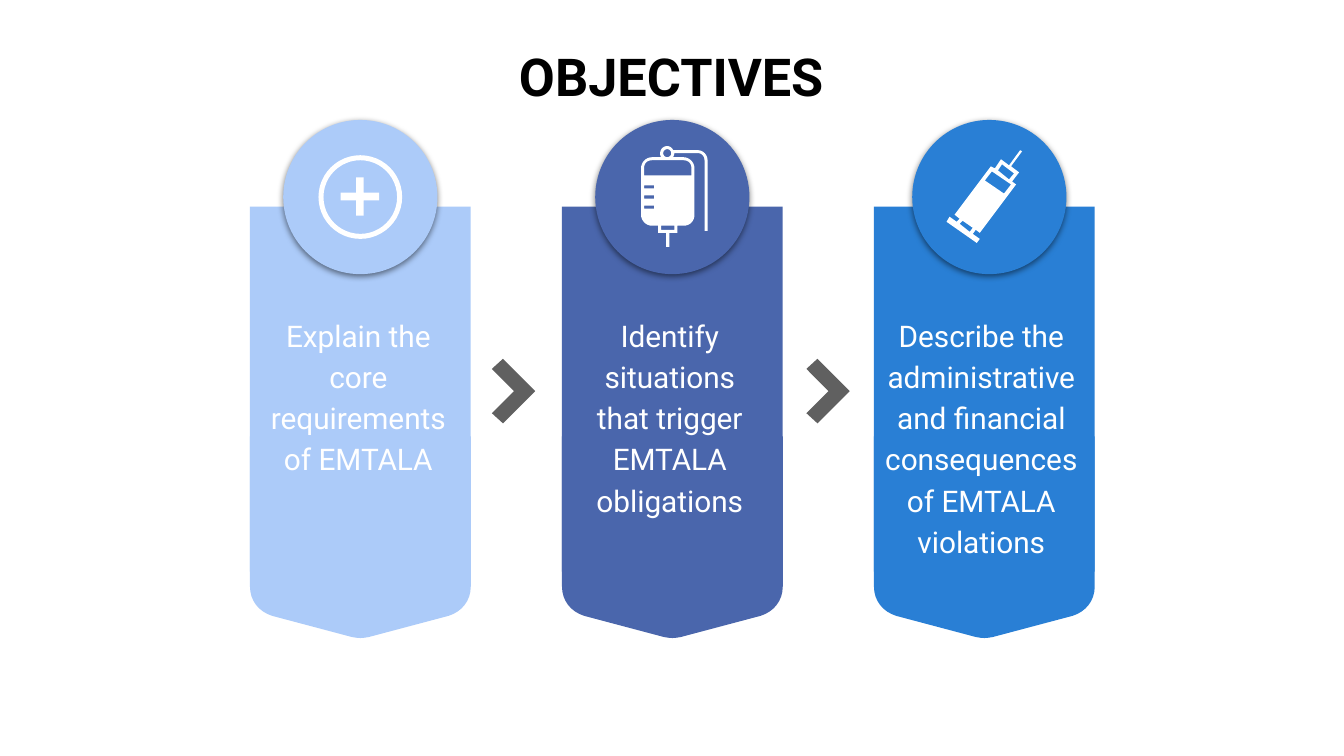
from collections import namedtuple
from dataclasses import dataclass

from lxml import etree
from pptx import Presentation
from pptx.dml.color import RGBColor
from pptx.enum.shapes import MSO_SHAPE
from pptx.enum.text import MSO_ANCHOR, MSO_AUTO_SIZE, PP_ALIGN
from pptx.oxml.ns import qn
from pptx.util import Inches, Pt

OVAL, RECT = MSO_SHAPE.OVAL, MSO_SHAPE.RECTANGLE
DONUT, CROSS = MSO_SHAPE.DONUT, MSO_SHAPE.CROSS
CENTER, TOP = PP_ALIGN.CENTER, MSO_ANCHOR.TOP
FIXED, GROW = MSO_AUTO_SIZE.NONE, MSO_AUTO_SIZE.SHAPE_TO_FIT_TEXT

# All positions are columns and rows of a square grid
CELL = Inches(0.1)
COLS, ROWS = 133.33, 75


@dataclass(frozen=True)
class Theme:
    font: str = "Roboto"
    title: float = 37.3
    body: float = 21.3
    ink: str = "000000"
    white: str = "FFFFFF"
    arrow: str = "606060"
    cards: tuple = ("ACCBF9", "4A66AC", "297FD5")


THEME = Theme()

# Card layout
LEFT, STEP, WIDE, TALL = 24.8, 30.95, 21.9, 36.2
CARD_TOP, TIP_TOP, TEXT_TOP = 20.5, 43.3, 29.7
DISC, DISC_TOP = 15.3, 11.9

Card = namedtuple("Card", "text nudge wide tall shift")
CARDS = (
    Card("Explain the core requirements of EMTALA", -0.2, 21.9, 22.1, 0),
    Card("Identify situations that trigger EMTALA obligations",
         0, 21.4, 33.4, 0),
    Card("Describe the administrative and financial consequences "
         "of EMTALA violations", -0.3, 21.9, 30.4, 0.5),
)


def box(left, top, right, base):
    return [(left, top), (right, top), (right, base), (left, base)]


# Outlines: a pair is a corner, six numbers are a Bezier curve
ARROW = [[(1.1, 0), (0, 1), (2.2, 3.2), (0, 5.4), (1.1, 6.4), (4.3, 3.2)]]
TIP = [[
    (0, 0), (0, 14.9), (0, 16.3, 0.9, 17.4, 2.2, 17.8), (10.1, 19.9),
    (10.4, 19.95, 10.65, 20, 10.95, 20),
    (11.25, 20, 11.5, 19.95, 11.8, 19.9),
    (19.7, 17.8), (21, 17.4, 21.9, 16.3, 21.9, 14.9), (21.9, 0),
]]
BAG = [
    # Bag, tube and hook
    [(2.6, 0), (2.2, 0, 1.9, 0.3, 1.9, 0.7), (1.9, 0.8, 1.9, 1, 2, 1.1),
     (1.1, 1.1), (0.5, 1.1, 0, 1.6, 0, 2.2), (0, 6.8),
     (0, 7.4, 0.5, 7.9, 1.1, 7.9), (1.7, 7.9), (1.7, 8.6), (2.5, 8.6),
     (2.5, 10), (2.8, 10), (2.8, 8.6), (3.6, 8.6), (3.6, 7.9), (4.2, 7.9),
     (4.9, 7.9, 5.3, 7.4, 5.3, 6.8), (5.3, 2.2),
     (5.3, 1.6, 4.8, 1.1, 4.2, 1.1), (3.2, 1.1),
     (3.2, 1, 3.3, 0.9, 3.3, 0.7), (5.7, 0.7),
     (6, 0.7, 6.3, 1, 6.3, 1.4), (6.3, 8.4), (6.6, 8.4), (6.6, 1.4),
     (6.6, 0.9, 6.2, 0.4, 5.6, 0.4), (3.2, 0.4),
     (3.1, 0.2, 2.9, 0, 2.6, 0)],
    # Eye of the hook
    [(2.6, 0.3), (2.82, 0.3, 3, 0.48, 3, 0.7),
     (3, 0.92, 2.82, 1.1, 2.6, 1.1), (2.38, 1.1, 2.2, 0.92, 2.2, 0.7),
     (2.2, 0.48, 2.38, 0.3, 2.6, 0.3)],
    # Empty top, scale marks and port
    [(4.2, 1.4), (4.7, 1.4, 5, 1.7, 5, 2.2), (5, 2.9), (0.3, 2.9),
     (0.3, 2.2), (0.3, 1.7, 0.6, 1.4, 1.1, 1.4)],
    *[box(0.3, row, 1.3, row + 0.3) for row in (3.9, 4.9, 5.9)],
    box(2, 7.9, 3.3, 8.3),
]
SYRINGE = [
    [(7.3, 0), (6.2, 1.5), (5.4, 0.9), (4.8, 1.8), (4.4, 1.6), (0.8, 6.4),
     (1.3, 6.8), (1, 7.1), (0.3, 6.6), (0, 7.1), (3, 9.2), (3.3, 8.8),
     (2.6, 8.3), (2.9, 7.9), (3.3, 8.2), (6.9, 3.4), (6.5, 3.1), (7.2, 2.2),
     (6.4, 1.6), (7.5, 0.1)],
    # Hub, barrel and plunger gaps
    [(5.5, 1.4), (6.7, 2.3), (6.2, 2.9), (5.1, 2)],
    [(4.5, 2.1), (6.4, 3.4), (5.7, 4.3), (3.8, 3)],
    [(1.6, 7), (2.6, 7.7), (2.3, 8.1), (1.3, 7.3)],
]


def grid(*cells):
    return [round(cell * CELL) for cell in cells]


def paint(shape, color):
    shape.shadow.inherit = False
    shape.fill.solid()
    shape.fill.fore_color.rgb = RGBColor.from_string(color)
    shape.line.fill.background()
    return shape


def preset(slide, kind, place, color, adjust=None):
    shape = slide.shapes.add_shape(kind, *grid(*place))
    if adjust is not None:
        shape.adjustments[0] = adjust
    return paint(shape, color)


def trace(loop, steps=8):
    """Turn corners and curves into plain points."""
    points = []
    for item in loop:
        if len(item) == 2:
            points.append(item)
            continue
        knots = (points[-1], item[:2], item[2:4], item[4:])
        for step in range(1, steps + 1):
            t = step / steps
            u = 1 - t
            parts = (u ** 3, 3 * u * u * t, 3 * u * t * t, t ** 3)
            points.append(tuple(sum(p * k[axis] for p, k in zip(parts, knots))
                                for axis in (0, 1)))
    return points


def outline(slide, loops, left, top, color):
    pen = None
    for loop in loops:
        first, *rest = [grid(left + x, top + y) for x, y in trace(loop)]
        if pen is None:
            pen = slide.shapes.build_freeform(*first)
        else:
            pen.move_to(*first)
        pen.add_line_segments(rest, close=True)
    return paint(pen.convert_to_shape(), color)


def shade(shape):
    effects = shape._element.spPr.find(qn("a:effectLst"))
    outer = etree.SubElement(effects, qn("a:outerShdw"), blurRad="57150",
                             dist="19050", dir="5400000", algn="bl")
    black = etree.SubElement(outer, qn("a:srgbClr"), val=THEME.ink)
    etree.SubElement(black, qn("a:alpha"), val="50000")


def write(shape, text, place, size, color, bold=False, fit=FIXED, lines=1.0):
    shape.left, shape.top, shape.width, shape.height = grid(*place)
    frame = shape.text_frame
    frame.text = text
    frame.word_wrap = True
    frame.auto_size = fit
    frame.vertical_anchor = TOP
    frame.margin_left = frame.margin_right = Inches(0.13)
    frame.margin_top = frame.margin_bottom = Inches(0.13)
    line = frame.paragraphs[0]
    line.alignment = CENTER
    line.line_spacing = lines
    font = line.runs[0].font
    font.name, font.size, font.bold = THEME.font, Pt(size), bold
    font.color.rgb = RGBColor.from_string(color)


def panel(slide, card, left, color):
    preset(slide, RECT, (left, CARD_TOP, WIDE, TALL), color)
    disc = left + (WIDE - DISC) / 2 + card.shift
    shade(preset(slide, OVAL, (disc, DISC_TOP, DISC, DISC), color))
    outline(slide, TIP, left, TIP_TOP, color)
    label = slide.shapes.add_textbox(0, 0, CELL, CELL)
    place = (left + card.nudge, TEXT_TOP, card.wide, card.tall)
    write(label, card.text, place, THEME.body, THEME.white,
          fit=GROW, lines=1.15)


def main():
    deck = Presentation()
    deck.slide_width, deck.slide_height = grid(COLS, ROWS)
    slide = deck.slides.add_slide(deck.slide_layouts[5])

    # Title
    write(slide.shapes.title, "OBJECTIVES", (4.5, 3.1, 124.2, 8.4),
          THEME.title, THEME.ink, bold=True)

    # Arrows between the cards
    for gap in range(len(CARDS) - 1):
        outline(slide, ARROW, 48.8 + gap * 31.2, 35.6, THEME.arrow)

    # Cards
    for index, (card, color) in enumerate(zip(CARDS, THEME.cards)):
        panel(slide, card, LEFT + index * STEP, color)

    # Icons
    preset(slide, DONUT, (31.6, 15.4, 8.3, 8.3), THEME.white, 0.06)
    preset(slide, CROSS, (33.8, 17.6, 3.8, 3.8), THEME.white, 0.4)
    outline(slide, BAG, 63.6, 14.5, THEME.white)
    outline(slide, SYRINGE, 93.9, 14.9, THEME.white)

    deck.save("out.pptx")


if __name__ == "__main__":
    main()
